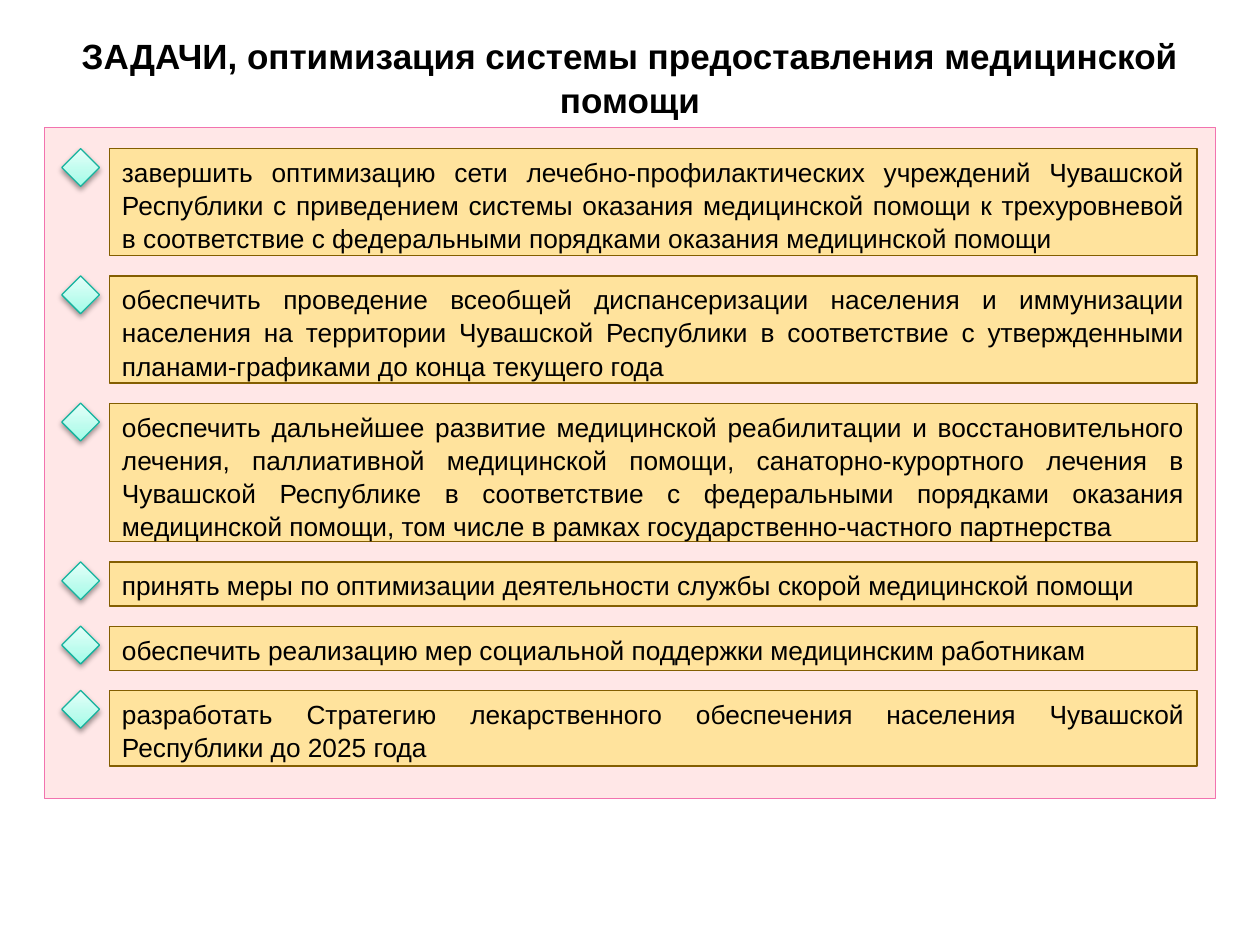
from lxml.etree import fromstring
from pptx import Presentation
from pptx.dml.color import RGBColor
from pptx.enum.shapes import MSO_SHAPE
from pptx.enum.text import MSO_ANCHOR, MSO_AUTO_SIZE, PP_ALIGN
from pptx.util import Inches, Pt

# Theme: colours and type sizes
theme = {
    "font": "Arial", "ink": "000000", "head": 20, "body": 15, "lead": 1.05,
    "panel": "FFE7E7", "rim": "F273AF",
    "box": "FFE39D", "edge": "835E01",
    "gem": [(0, "9DFDE8"), (35, "BBFCED"), (100, "E4FFF9")], "teal": "16B39E",
}
NS = 'xmlns:a="http://schemas.openxmlformats.org/drawingml/2006/main"'

deck = Presentation()
deck.slide_width, deck.slide_height = Inches(10), Inches(7.5)
slide = deck.slides.add_slide(deck.slide_layouts[5])

# Grid: 100 columns by 75 rows
COL, ROW = deck.slide_width / 100, deck.slide_height / 75


def write(shape, text, size, bold=False, align=PP_ALIGN.JUSTIFY,
          fit=MSO_AUTO_SIZE.SHAPE_TO_FIT_TEXT, side=0.1):
    frame = shape.text_frame
    frame.word_wrap = True
    frame.auto_size = fit
    frame.vertical_anchor = MSO_ANCHOR.TOP
    frame.margin_left = frame.margin_right = Inches(side)
    frame.margin_top = frame.margin_bottom = Inches(0.05)
    frame.text = text
    para = frame.paragraphs[0]
    para.alignment = align
    para.line_spacing = theme["lead"]
    para.space_before = Pt(0)
    font = para.runs[0].font
    font.name, font.size, font.bold = theme["font"], Pt(size), bold
    font.color.rgb = RGBColor.from_string(theme["ink"])


def draw(kind, x, y, w, h, line, weight, fill=None):
    shape = slide.shapes.add_shape(
        kind, int(x * COL), int(y * ROW), int(w * COL), int(h * ROW))
    shape.shadow.inherit = False
    if fill:
        shape.fill.solid()
        shape.fill.fore_color.rgb = RGBColor.from_string(fill)
    shape.line.color.rgb = RGBColor.from_string(line)
    shape.line.width = Pt(weight)
    return shape


# Title
title = slide.shapes.title
title.left, title.top = int(5 * COL), int(2.1 * ROW)
title.width, title.height = int(90 * COL), int(6.1 * ROW)
write(title, "ЗАДАЧИ, оптимизация системы предоставления медицинской помощи",
      size=theme["head"], bold=True, align=PP_ALIGN.CENTER,
      fit=MSO_AUTO_SIZE.NONE, side=0.04)

# Panel behind the tasks
draw(MSO_SHAPE.RECTANGLE, 3.5, 10.1, 93, 53.3, theme["rim"], 0.5, theme["panel"])

# Tasks, each with its number of text lines
tasks = [
    (3, "завершить оптимизацию сети лечебно-профилактических учреждений "
        "Чувашской Республики с приведением системы оказания медицинской помощи "
        "к трехуровневой в соответствие с федеральными порядками оказания "
        "медицинской помощи"),
    (3, "обеспечить проведение всеобщей диспансеризации населения и иммунизации "
        "населения на территории Чувашской Республики в соответствие с "
        "утвержденными планами-графиками до конца текущего года"),
    (4, "обеспечить дальнейшее развитие медицинской реабилитации и "
        "восстановительного лечения, паллиативной медицинской помощи, "
        "санаторно-курортного лечения в Чувашской Республике в соответствие с "
        "федеральными порядками оказания медицинской помощи, том числе в рамках "
        "государственно-частного партнерства"),
    (1, "принять меры по оптимизации деятельности службы скорой медицинской помощи"),
    (1, "обеспечить реализацию мер социальной поддержки медицинским работникам"),
    (2, "разработать Стратегию лекарственного обеспечения населения Чувашской "
        "Республики до 2025 года"),
]
stops = "".join(f'<a:gs pos="{pos * 1000}"><a:srgbClr val="{tone}"/></a:gs>'
                for pos, tone in theme["gem"])
blend = (f'<a:gradFill {NS} rotWithShape="1"><a:gsLst>{stops}</a:gsLst>'
         '<a:lin ang="16200000" scaled="0"/></a:gradFill>')
shade = (f'<a:outerShdw {NS} blurRad="{Pt(3.1)}" dist="{Pt(1.6)}" dir="5400000" '
         'rotWithShape="0"><a:srgbClr val="000000"><a:alpha val="38000"/>'
         '</a:srgbClr></a:outerShdw>')

top, gap = 11.8, 1.6
for lines, text in tasks:
    tall = 1 + 2.5 * lines
    box = draw(MSO_SHAPE.RECTANGLE, 8.7, top, 86.3, tall,
               theme["edge"], 0.75, theme["box"])
    write(box, text, size=theme["body"])

    # Diamond marker with gradient and soft shadow
    gem = draw(MSO_SHAPE.DIAMOND, 4.9, top, 3, 3, theme["teal"], 0.75)
    props = gem.element.spPr
    props.insert(2, fromstring(blend))
    props.find("{*}effectLst").append(fromstring(shade))
    top += tall + gap

deck.save("out.pptx")
